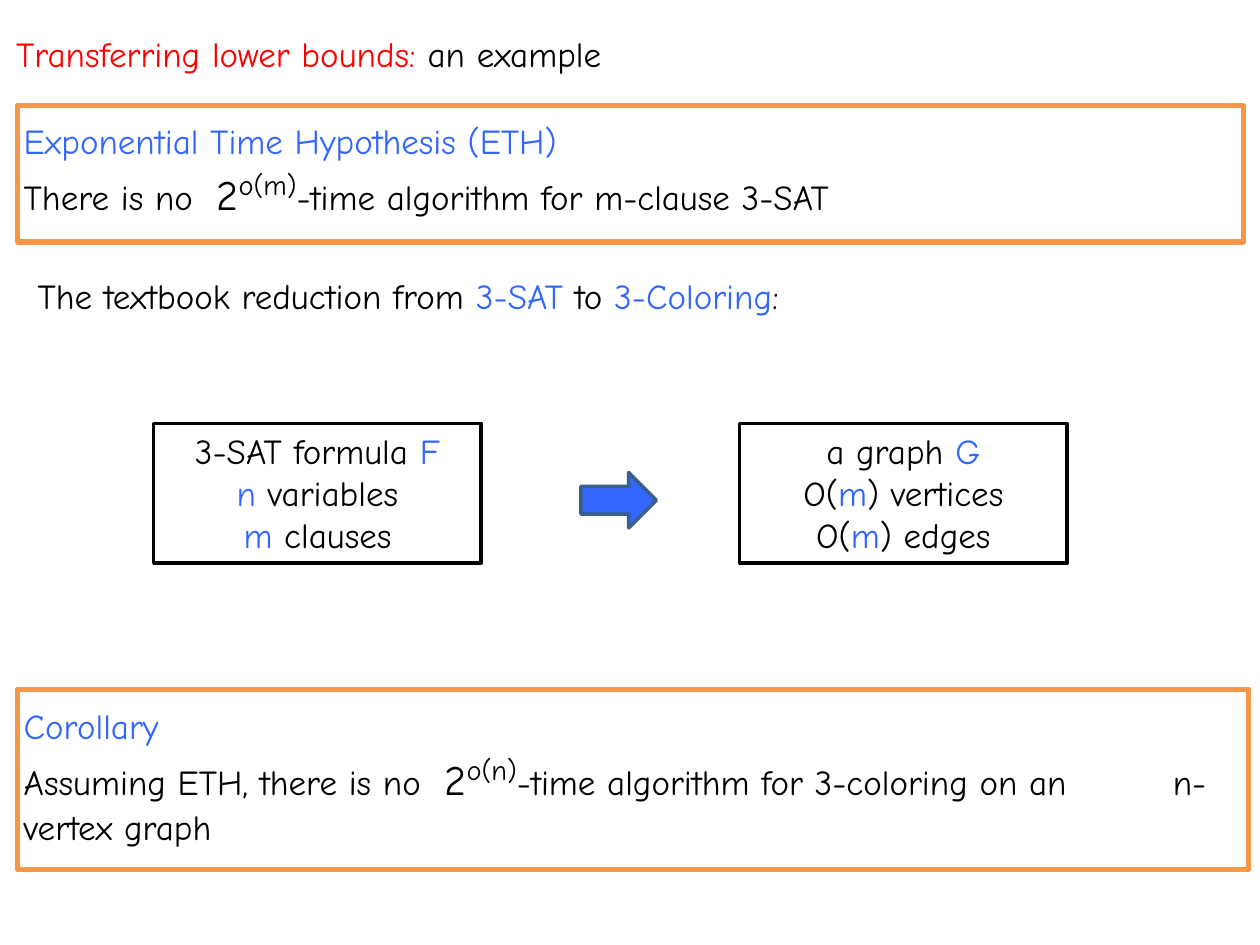
from lxml import etree
from pptx import Presentation
from pptx.dml.color import RGBColor
from pptx.enum.shapes import MSO_SHAPE
from pptx.enum.text import MSO_ANCHOR, MSO_AUTO_SIZE, PP_ALIGN
from pptx.oxml.ns import qn
from pptx.util import Inches, Pt

RECTANGLE = MSO_SHAPE.RECTANGLE
RIGHT_ARROW = MSO_SHAPE.RIGHT_ARROW
LEFT, CENTER = PP_ALIGN.LEFT, PP_ALIGN.CENTER
TOP = MSO_ANCHOR.TOP
FIT_SHAPE = MSO_AUTO_SIZE.SHAPE_TO_FIT_TEXT

BLACK = RGBColor(0x00, 0x00, 0x00)
RED = RGBColor(0xFF, 0x00, 0x00)
BLUE = RGBColor(0x33, 0x66, 0xFF)
ORANGE = RGBColor(0xF7, 0x96, 0x46)
ARROW_EDGE = RGBColor(0x3A, 0x5F, 0x8C)
FONT = "Comic Neue"


def add_span(para, text, color=BLACK, size=20, raised=False):
    span = para.add_run()
    span.text = text
    span.font.name = FONT
    span.font.size = Pt(size)
    span.font.color.rgb = color
    if raised:
        span._r.get_or_add_rPr().set("baseline", "30000")


def add_tab_stop(para, position):
    tabs = etree.SubElement(para._p.get_or_add_pPr(), qn("a:tabLst"))
    etree.SubElement(tabs, qn("a:tab"), pos=str(position), algn="l")


def write_lines(box, lines, align=LEFT):
    """Fill box with lines, each a list of (text, format) pairs."""
    frame = box.text_frame
    frame.word_wrap = True
    frame.auto_size = FIT_SHAPE
    frame.vertical_anchor = TOP
    for index, spans in enumerate(lines):
        para = frame.paragraphs[0] if index == 0 else frame.add_paragraph()
        para.alignment = align
        for text, style in spans:
            add_span(para, text, **style)


def add_text(page, left, top, width, height, lines):
    box = page.shapes.add_textbox(
        Inches(left), Inches(top), Inches(width), Inches(height))
    write_lines(box, lines)
    return box


def add_figure(page, kind, left, top, width, height, edge, weight, fill=None):
    figure = page.shapes.add_shape(
        kind, Inches(left), Inches(top), Inches(width), Inches(height))
    figure.shadow.inherit = False
    figure.line.color.rgb = edge
    figure.line.width = Pt(weight)
    if fill is None:
        figure.fill.background()
    else:
        figure.fill.solid()
        figure.fill.fore_color.rgb = fill
    return figure


def add_statement(page, left, top, width, height, text_top, text_height,
                  heading, before, exponent, after, tab=None):
    """Framed claim: a heading over a sentence holding a power of two."""
    sentence = [(before, {}), ("2", {"size": 24}),
                (exponent, {"size": 28, "raised": True}), (after, {})]
    box = add_text(page, left - 0.05, text_top, 9.93, text_height,
                   [[(heading, {"color": BLUE})], sentence])
    if tab is not None:
        add_tab_stop(box.text_frame.paragraphs[1], Inches(tab))
    add_figure(page, RECTANGLE, left, top, width, height, ORANGE, 3)


def add_reduction(page, left, top):
    """Formula box, arrow and graph box in a row."""
    blue = {"color": BLUE}
    formula = [[("3-SAT formula ", {}), ("F", blue)],
               [("n", blue), (" variables", {})],
               [("m", blue), (" clauses", {})]]
    graph = [[("a graph ", {}), ("G", blue)]]
    graph += [[("O(", {}), ("m", blue), (f") {part}", {})]
              for part in ("vertices", "edges")]
    for offset, lines in ((0, formula), (4.65, graph)):
        box = add_figure(page, RECTANGLE, left + offset, top, 2.6, 1.11, BLACK, 2)
        write_lines(box, lines, align=CENTER)
    add_figure(page, RIGHT_ARROW, left + 3.39, top + 0.39, 0.6, 0.44,
               ARROW_EDGE, 2, fill=BLUE)


def main():
    deck = Presentation()
    deck.slide_width, deck.slide_height = Inches(10), Inches(7.5)
    page = deck.slides.add_slide(deck.slide_layouts[6])

    add_text(page, 0.03, 0.21, 9.93, 0.44, [[
        ("Transferring lower bounds: ", {"color": RED}), ("an example", {})]])
    add_statement(page, 0.14, 0.84, 9.73, 1.08, 0.9, 0.84,
                  "Exponential Time Hypothesis (ETH)", "There is no  ",
                  "o(m)", "-time algorithm for m-clause 3-SAT")
    add_text(page, 0.2, 2.13, 8.7, 0.44, [[
        ("The textbook reduction from ", {}), ("3-SAT", {"color": BLUE}),
        (" to ", {}), ("3-Coloring", {"color": BLUE}), (":", {})]])
    add_reduction(page, 1.22, 3.36)
    add_statement(page, 0.14, 5.47, 9.77, 1.43, 5.54, 1.18,
                  "Corollary", "Assuming ETH, there is no  ", "o(n)",
                  "-time algorithm for 3-coloring on an\tn-vertex graph",
                  tab=9.12)
    deck.save("out.pptx")


if __name__ == "__main__":
    main()
